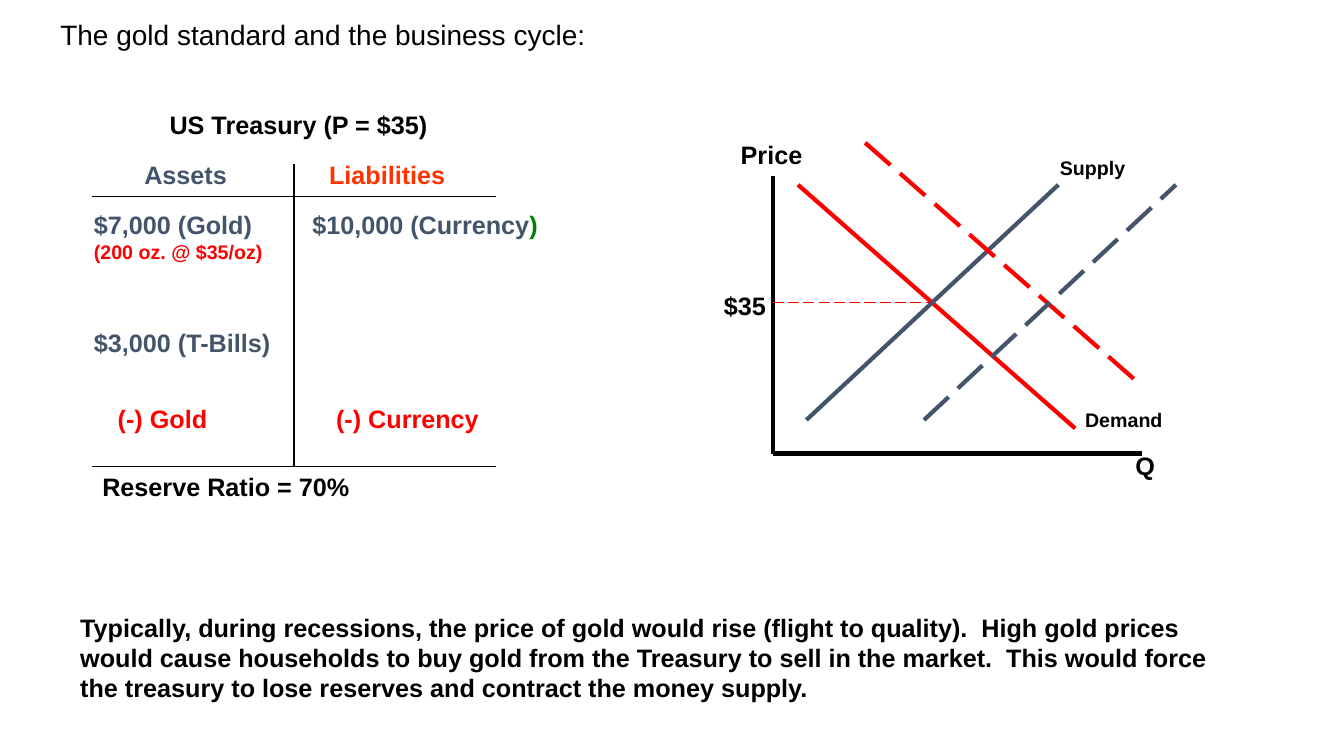
from dataclasses import dataclass

from lxml.etree import SubElement
from pptx import Presentation
from pptx.dml.color import RGBColor
from pptx.enum.dml import MSO_LINE_DASH_STYLE as Dash
from pptx.enum.shapes import MSO_CONNECTOR as Connector
from pptx.enum.text import MSO_AUTO_SIZE as AutoSize
from pptx.oxml.ns import qn
from pptx.slide import Slide
from pptx.util import Emu, Pt

PX = 9525  # EMU in one px, 96 px to the inch
COLORS = {
    "black": "000000",
    "red": "FF0000",
    "orange": "FF3300",
    "slate": "44546A",
    "green": "008000",
}


@dataclass
class Line:
    start: tuple[int, int]
    end: tuple[int, int]
    color: str = "black"
    weight: float = 3
    dashed: bool = False

    def shifted(self, right: int, down: int = 0) -> "Line":
        start, end = ((x + right, y + down) for x, y in (self.start, self.end))
        return Line(start, end, self.color, self.weight, dashed=True)


@dataclass
class Run:
    text: str
    color: str = "black"
    size: int = 18
    bold: bool = True


@dataclass
class Label:
    left: int
    top: int
    width: int
    height: int
    runs: list[Run]


def px(length: int) -> Emu:
    return Emu(length * PX)


def rgb(color: str) -> RGBColor:
    return RGBColor.from_string(COLORS[color])


def draw_line(slide: Slide, line: Line) -> None:
    ends = [px(value) for value in (*line.start, *line.end)]
    connector = slide.shapes.add_connector(Connector.STRAIGHT, *ends)
    connector.line.color.rgb = rgb(line.color)
    connector.line.width = Pt(line.weight)
    if line.dashed:
        connector.line.dash_style = Dash.LONG_DASH
    SubElement(connector.element.spPr, qn("a:effectLst"))


def draw_label(slide: Slide, label: Label) -> None:
    box = [px(value) for value in (label.left, label.top, label.width, label.height)]
    frame = slide.shapes.add_textbox(*box).text_frame
    frame.word_wrap = True
    frame.auto_size = AutoSize.SHAPE_TO_FIT_TEXT
    paragraph = frame.paragraphs[0]
    for part in label.runs:
        run = paragraph.add_run()
        run.text = part.text
        formats = {"name": "Arial", "size": Pt(part.size), "bold": part.bold}
        for attribute, value in formats.items():
            setattr(run.font, attribute, value)
        run.font.color.rgb = rgb(part.color)


# Gold market: axes, curves and their shifts
AXIS_X, AXIS_Y = 736, 432
DEMAND = Line((760, 176), (1024, 408), "red")
SUPPLY = Line((768, 400), (1008, 176), "slate")
MARKET_LINES = [
    Line((AXIS_X, 168), (AXIS_X, AXIS_Y)),
    Line((1088, AXIS_Y), (AXIS_X, AXIS_Y)),
    DEMAND,
    SUPPLY,
    Line((AXIS_X, 288), (888, 288), "red", 1, dashed=True),
    DEMAND.shifted(64, -40),
    SUPPLY.shifted(112),
]
MARKET_LABELS = [
    Label(696, 128, 80, 38, [Run("Price")]),
    Label(680, 272, 88, 38, [Run("$35")]),
    Label(1072, 424, 48, 38, [Run("Q")]),
    Label(1024, 384, 96, 32, [Run("Demand", size=14)]),
    Label(1000, 144, 96, 32, [Run("Supply", size=14)]),
]

# Treasury T-account
LEDGER_BOTTOM = 444
LEDGER_LINES = [
    *(Line((88, y), (472, y), weight=0.75) for y in (187, LEDGER_BOTTOM)),
    Line((280, 156), (280, LEDGER_BOTTOM), weight=0.75),
]
LEDGER_LABELS = [
    Label(152, 99, 304, 38, [Run("US Treasury (P = $35)")]),
    Label(128, 147, 192, 38, [Run("Assets", "slate")]),
    Label(304, 147, 192, 38, [Run("Liabilities", "orange")]),
    Label(80, 195, 200, 60, [Run("$7,000 (Gold) ", "slate"),
                             Run("(200 oz. @ $35/oz)", "red", 14)]),
    Label(288, 195, 248, 38, [Run("$10,000 (Currency", "slate"), Run(")", "green")]),
    Label(80, 307, 232, 38, [Run("$3,000 (T-Bills)", "slate")]),
    Label(96, 379, 120, 38, [Run(" (-) Gold", "red")]),
    Label(304, 379, 168, 38, [Run(" (-) Currency", "red")]),
    Label(88, LEDGER_BOTTOM, 344, 38, [Run("Reserve Ratio = 70%")]),
]

# Heading and explanation
NOTES = [
    Label(48, 12, 864, 41,
          [Run("The gold standard and the business cycle:", size=20, bold=False)]),
    Label(67, 578, 1096, 97, [Run(
        "Typically, during recessions, the price of gold would rise "
        "(flight to quality).  High gold prices would cause households to buy "
        "gold from the Treasury to sell in the market.  This would force the "
        "treasury to lose reserves and contract the money supply.")]),
]


def main() -> None:
    presentation = Presentation()
    presentation.slide_width, presentation.slide_height = px(1280), px(720)
    slide = presentation.slides.add_slide(presentation.slide_layouts[6])
    for line in MARKET_LINES + LEDGER_LINES:
        draw_line(slide, line)
    for label in MARKET_LABELS + LEDGER_LABELS + NOTES:
        draw_label(slide, label)
    presentation.save("out.pptx")


if __name__ == "__main__":
    main()
